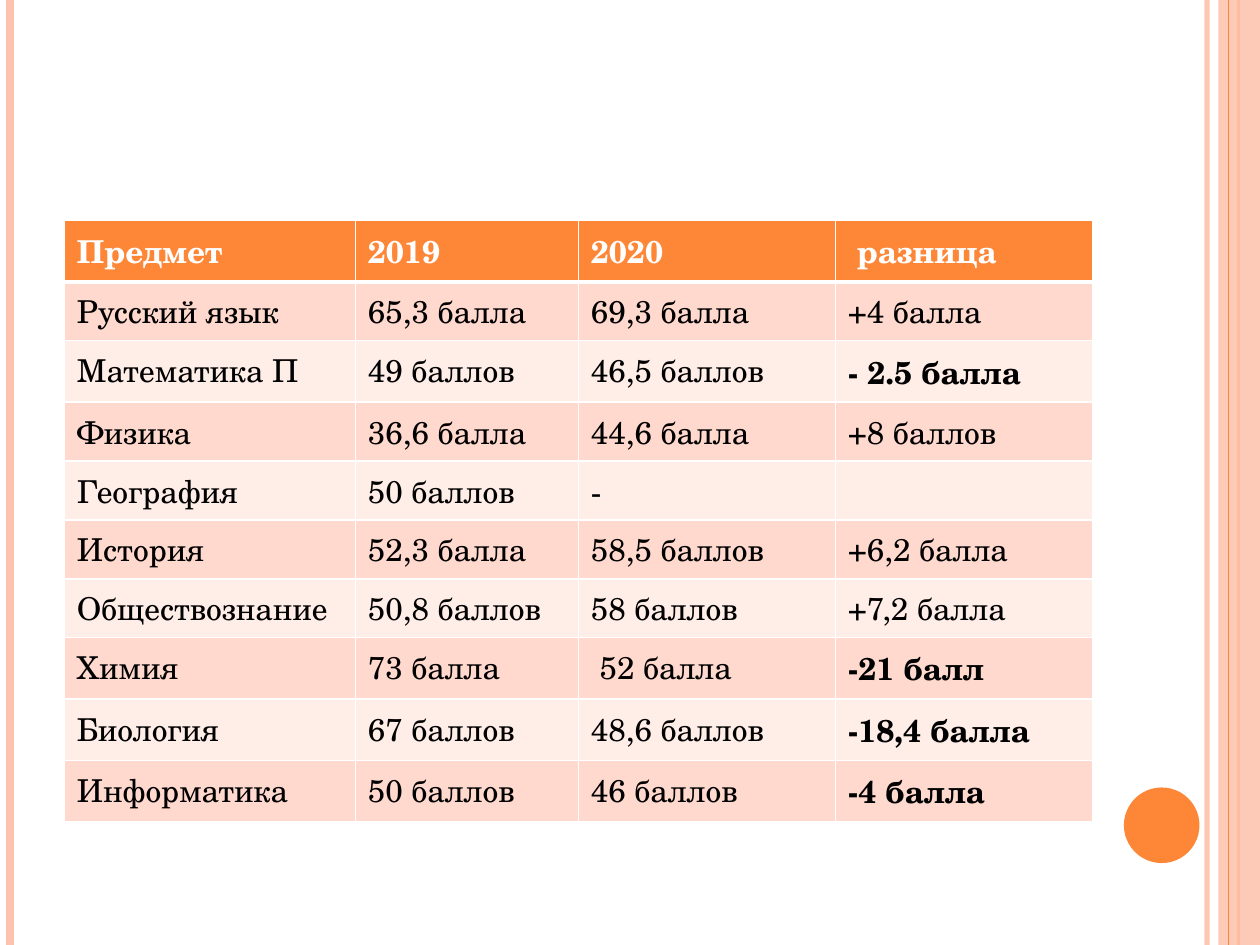
from lxml.etree import SubElement
from pptx import Presentation
from pptx.dml.color import RGBColor
from pptx.enum.shapes import MSO_CONNECTOR as Line, MSO_SHAPE as Preset
from pptx.oxml.ns import qn
from pptx.util import Inches, Pt

ORANGE = RGBColor(0xFE, 0x86, 0x37)
PEACH = RGBColor(0xFE, 0xC3, 0xAE)
BAND_DARK = RGBColor(0xFF, 0xD9, 0xCE)
BAND_LIGHT = RGBColor(0xFF, 0xED, 0xE8)
WHITE = RGBColor(0xFF, 0xFF, 0xFF)
BLACK = RGBColor(0, 0, 0)
FONT = "TeX Gyre Schola"

SLIDE_W, SLIDE_H = 10, 7.5
TABLE_LEFT, TABLE_TOP, ROW_H = 0.51, 1.75, 0.41
COLUMNS = (2.31, 1.77, 2.04, 2.04)

SCORES = [
    ("Предмет", "2019", "2020", " разница"),
    ("Русский язык", "65,3 балла", "69,3 балла", "+4 балла"),
    ("Математика П", "49 баллов", "46,5 баллов", "- 2.5 балла"),
    ("Физика", "36,6 балла", "44,6 балла", "+8 баллов"),
    ("География", "50 баллов", "-", ""),
    ("История", "52,3 балла", "58,5 баллов", "+6,2 балла"),
    ("Обществознание", "50,8 баллов", "58 баллов", "+7,2 балла"),
    ("Химия", "73 балла", " 52 балла", "-21 балл"),
    ("Биология", "67 баллов", "48,6 баллов", "-18,4 балла"),
    ("Информатика", "50 баллов", "46 баллов", "-4 балла"),
]

# x, colour, width in points, opacity in percent
LEFT_STRIPES = [(9.58, PEACH, 3, 93), (0.08, PEACH, 4.5, 100), (9.83, ORANGE, 1.5, 100)]
EDGE_STRIPE = (9.75, ORANGE, 0.75, 100)

# preset, left, top, width, height, colour, opacity in percent
SIDE_BAND = (Preset.RECTANGLE, 9.67, 0, 0.33, SLIDE_H, PEACH, 87)
PAGE_DISC = (Preset.OVAL, 8.92, 6.25, 0.6, 0.6, ORANGE, 100)


def set_opacity(properties, percent):
    if percent < 100:
        color = next(properties.iter(qn("a:srgbClr")))
        SubElement(color, qn("a:alpha"), val=str(percent * 1000))


def add_stripe(slide, x, color, width, opacity):
    stripe = slide.shapes.add_connector(
        Line.STRAIGHT, Inches(x), 0, Inches(x), Inches(SLIDE_H))
    stripe.line.color.rgb = color
    stripe.line.width = Pt(width)
    properties = stripe._element.spPr
    set_opacity(properties, opacity)
    SubElement(properties, qn("a:effectLst"))


def add_block(slide, preset, left, top, width, height, color, opacity):
    block = slide.shapes.add_shape(
        preset, *map(Inches, (left, top, width, height)))
    block.shadow.inherit = False
    block.fill.solid()
    block.fill.fore_color.rgb = color
    block.line.fill.background()
    set_opacity(block._element.spPr, opacity)


def add_borders(cell, widths):
    properties = cell._tc.get_or_add_tcPr()
    for side, width in widths.items():
        border = SubElement(properties, qn(f"a:ln{side}"), w=str(Pt(width)))
        fill = SubElement(border, qn("a:solidFill"))
        SubElement(fill, qn("a:srgbClr"), val=str(WHITE))


def fill_cell(cell, text, row, column):
    header = row == 0
    loss = column == len(COLUMNS) - 1 and text.startswith("-")
    add_borders(cell, {"L": 1, "R": 1, "T": 3 if row == 1 else 1, "B": 3 if header else 1})
    cell.fill.solid()
    cell.fill.fore_color.rgb = ORANGE if header else (BAND_LIGHT, BAND_DARK)[row % 2]
    cell.text = text
    paragraph = cell.text_frame.paragraphs[0]
    style = {"name": FONT, "size": Pt(18), "bold": header or loss}
    for target in (paragraph, *paragraph.runs):
        for key, value in style.items():
            setattr(target.font, key, value)
        target.font.color.rgb = WHITE if header else BLACK


def add_scores(slide):
    frame = slide.shapes.add_table(
        len(SCORES), len(COLUMNS), Inches(TABLE_LEFT), Inches(TABLE_TOP),
        Inches(sum(COLUMNS)), Inches(ROW_H * len(SCORES)))
    table = frame.table
    for column, width in zip(table.columns, COLUMNS):
        column.width = Inches(width)
    for r, record in enumerate(SCORES):
        table.rows[r].height = Inches(ROW_H)
        for c, text in enumerate(record):
            fill_cell(table.cell(r, c), text, r, c)


def main():
    deck = Presentation()
    deck.slide_width, deck.slide_height = Inches(SLIDE_W), Inches(SLIDE_H)
    slide = deck.slides.add_slide(deck.slide_layouts[6])

    # Side decoration, back to front
    for stripe in LEFT_STRIPES:
        add_stripe(slide, *stripe)
    add_block(slide, *SIDE_BAND)
    add_stripe(slide, *EDGE_STRIPE)
    add_block(slide, *PAGE_DISC)

    # Exam scores by subject
    add_scores(slide)
    deck.save("out.pptx")


if __name__ == "__main__":
    main()
